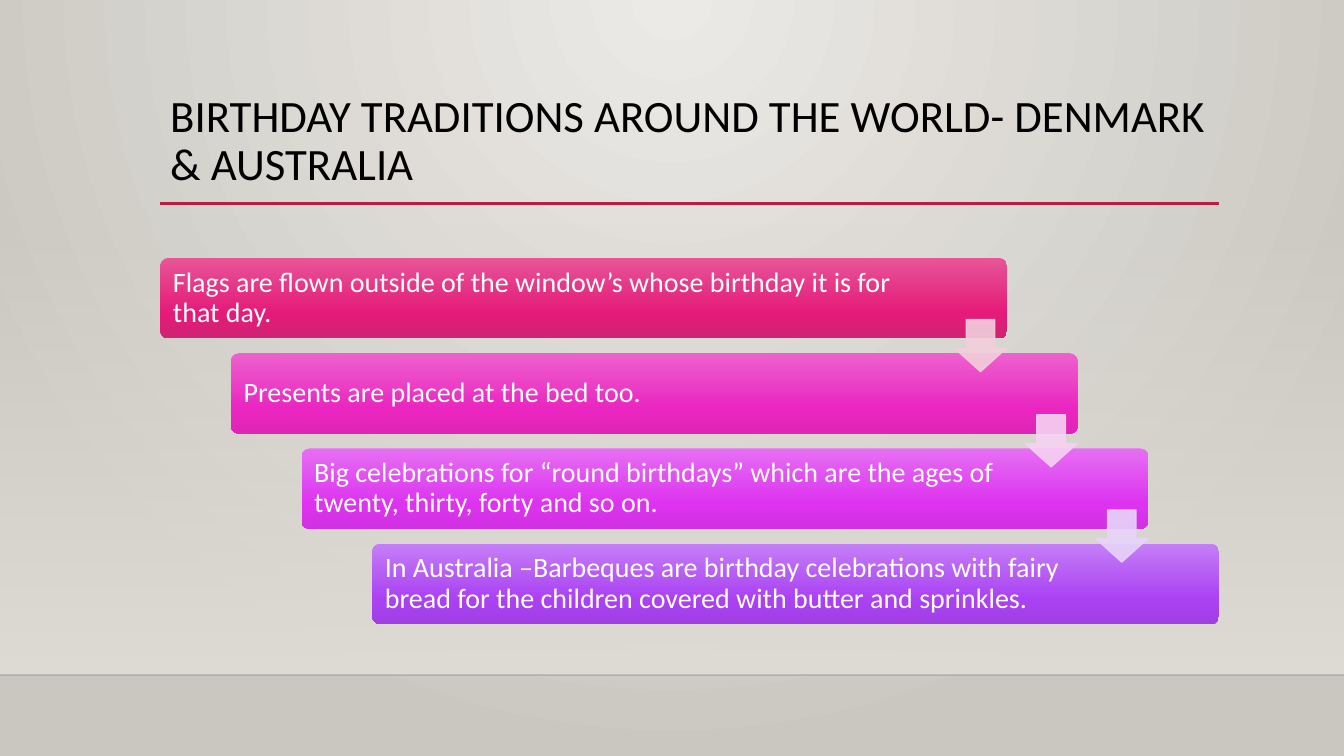
"""Build the slide on birthday traditions in Denmark and Australia."""
from lxml.etree import SubElement
from pptx import Presentation
from pptx.dml.color import RGBColor
from pptx.enum.shapes import MSO_CONNECTOR as Connector, MSO_SHAPE as Shape
from pptx.enum.text import MSO_ANCHOR as Anchor, PP_ALIGN as Align
from pptx.oxml.ns import qn
from pptx.util import Cm, Pt

FONT = "Calibri"
BLACK = RGBColor(0x00, 0x00, 0x00)
NEAR_BLACK = RGBColor(0x00, 0x00, 0x01)
WHITE = RGBColor(0xFF, 0xFF, 0xFF)
CRIMSON = RGBColor(0xB7, 0x1E, 0x42)
WALL_LIGHT = RGBColor(0xEC, 0xEA, 0xE7)
WALL_DARK = RGBColor(0xCA, 0xC7, 0xC1)
HAZE = RGBColor(0xDF, 0xDB, 0xD5)
ROSE = [RGBColor(0xE7, 0x55, 0x97), RGBColor(0xE5, 0x1A, 0x79), RGBColor(0xCF, 0x23, 0x74)]
PINK = [RGBColor(0xED, 0x61, 0xCE), RGBColor(0xEB, 0x26, 0xC0), RGBColor(0xDE, 0x25, 0xB6)]
MAGENTA = [RGBColor(0xE6, 0x6F, 0xF3), RGBColor(0xDD, 0x33, 0xF0), RGBColor(0xD1, 0x31, 0xE2)]
VIOLET = [RGBColor(0xC5, 0x7F, 0xF7), RGBColor(0xAA, 0x41, 0xF3), RGBColor(0xA1, 0x3F, 0xE5)]
ARROW_COLORS = [RGBColor(0xF2, 0xCF, 0xDB), RGBColor(0xF6, 0xD2, 0xF3), RGBColor(0xE7, 0xD5, 0xF9)]

TRADITIONS = [
    ("Flags are flown outside of the window’s whose birthday it is for that day.", ROSE, 2.5),
    ("Presents are placed at the bed too.", PINK, 3.38),
    ("Big celebrations for “round birthdays” which are the ages of "
     "twenty, thirty, forty and so on.", MAGENTA, 3.38),
    ("In Australia –Barbeques are birthday celebrations with fairy "
     "bread for the children covered with butter and sprinkles.", VIOLET, 3.38),
]
STEP_X, STEP_Y = 1.78, 2.4


def set_gradient(fill, element, stops):
    """Give the fill a downward gradient of (position, colour, opacity) stops."""
    fill.gradient()
    gradient = next(element.iter(qn("a:gradFill")))
    for child in list(gradient):
        gradient.remove(child)
    stop_list = SubElement(gradient, qn("a:gsLst"))
    for position, color, opacity in stops:
        stop = SubElement(stop_list, qn("a:gs"), pos=str(position * 1000))
        tint = SubElement(stop, qn("a:srgbClr"), val=str(color))
        if opacity < 100:
            SubElement(tint, qn("a:alpha"), val=str(opacity * 1000))
    SubElement(gradient, qn("a:lin"), ang="5400000", scaled="0")
    return gradient


def set_opacity(shape, percent):
    """Make every colour of the shape partly transparent."""
    for color in shape.element.spPr.iter(qn("a:srgbClr")):
        SubElement(color, qn("a:alpha"), val=str(percent * 1000))


deck = Presentation()
deck.slide_width, deck.slide_height = Cm(33.87), Cm(19.05)
page = deck.slides.add_slide(deck.slide_layouts[6])

glow = set_gradient(page.background.fill, page.element,
                    [(0, WALL_LIGHT, 100), (100, WALL_DARK, 100)])
glow.remove(glow.find(qn("a:lin")))
circle = SubElement(glow, qn("a:path"), path="circle")
SubElement(circle, qn("a:fillToRect"), l="43000", t="0", r="43000", b="100000")

haze = page.shapes.add_shape(Shape.RECTANGLE, 0, Cm(5.61), deck.slide_width, Cm(11.4))
haze.shadow.inherit = False
haze.line.fill.background()
set_gradient(haze.fill, haze.element, [(0, HAZE, 0), (100, HAZE, 100)])

for left, right, y, color, weight, opacity in [
    (0, 33.87, 17.01, NEAR_BLACK, 1, 20),
    (4.04, 30.73, 5.13, CRIMSON, 2.5, 100),
]:
    rule = page.shapes.add_connector(Connector.STRAIGHT, Cm(left), Cm(y), Cm(right), Cm(y))
    rule.line.color.rgb = color
    rule.line.width = Pt(weight)
    if opacity < 100:
        set_opacity(rule, opacity)
    SubElement(rule.element.spPr, qn("a:effectLst"))

title = page.shapes.add_textbox(Cm(4.04), Cm(2.24), Cm(26.67), Cm(2.92))
title.text_frame.word_wrap = True
para = title.text_frame.paragraphs[0]
para.text = "BIRTHDAY TRADITIONS AROUND THE WORLD- DENMARK & AUSTRALIA"
para.line_spacing = 0.9
para.font.name, para.font.size = FONT, Pt(32)
para.font.color.rgb = BLACK

for step, (text, colors, right_margin) in enumerate(TRADITIONS):
    card = page.shapes.add_shape(Shape.ROUNDED_RECTANGLE, Cm(4.04 + step * STEP_X),
                                 Cm(6.5 + step * STEP_Y), Cm(21.34), Cm(2.03))
    card.adjustments[0] = 0.1
    card.shadow.inherit = False
    card.line.fill.background()
    set_gradient(card.fill, card.element, zip((0, 69, 100), colors, (100, 100, 100)))
    frame = card.text_frame
    frame.word_wrap = True
    frame.vertical_anchor = Anchor.MIDDLE
    frame.margin_left, frame.margin_right = Cm(0.26), Cm(right_margin)
    para = frame.paragraphs[0]
    para.text = text
    para.alignment = Align.LEFT
    para.line_spacing = 0.9
    para.font.name, para.font.size = FONT, Pt(20)
    para.font.color.rgb = WHITE

for step, color in enumerate(ARROW_COLORS):
    arrow = page.shapes.add_shape(Shape.DOWN_ARROW, Cm(24.05 + step * STEP_X),
                                  Cm(8.05 + step * STEP_Y), Cm(1.32), Cm(1.32))
    arrow.adjustments[0], arrow.adjustments[1] = 0.55, 0.45
    arrow.shadow.inherit = False
    arrow.fill.solid()
    arrow.fill.fore_color.rgb = color
    arrow.line.color.rgb = color
    arrow.line.width = Pt(0.75)
    set_opacity(arrow, 90)

deck.save("out.pptx")
